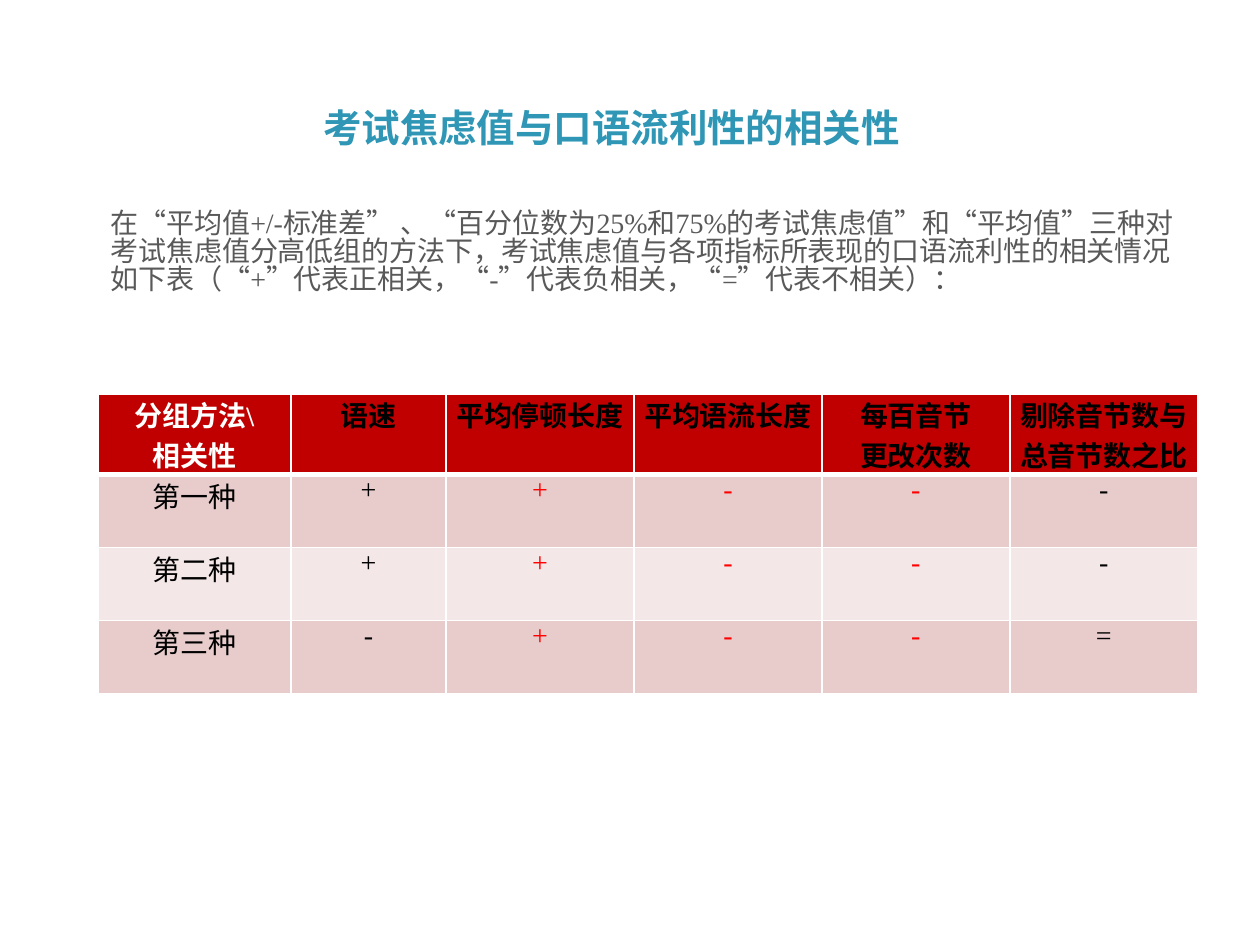
from dataclasses import dataclass

from lxml.etree import SubElement
from pptx import Presentation
from pptx.dml.color import RGBColor
from pptx.enum.text import MSO_ANCHOR, MSO_AUTO_SIZE, PP_ALIGN
from pptx.oxml.ns import qn
from pptx.util import Emu, Pt

PX = 914400 / 126
COLORS = {
    "title": "2F97B5",
    "body": "595959",
    "header": "C00000",
    "band_dark": "E8CCCC",
    "band_light": "F4E7E7",
    "white": "FFFFFF",
    "black": "000000",
    "red": "FF0000",
}
LATIN = "Times New Roman"

TITLE = "考试焦虑值与口语流利性的相关性"
INTRO = (
    "在“平均值+/-标准差” 、“百分位数为25%和75%的考试焦虑值”和“平均值”三种对考试焦虑值"
    "分高低组的方法下，考试焦虑值与各项指标所表现的口语流利性的相关情况如下表"
    "（“+”代表正相关，“-”代表负相关，“=”代表不相关）："
)
ROWS = [
    ["分组方法\\\n相关性", "语速", "平均停顿长度", "平均语流长度",
     "每百音节\n更改次数", "剔除音节数与总音节数之比"],
    ["第一种", "+", "+", "-", "-", "-"],
    ["第二种", "+", "+", "-", "-", "-"],
    ["第三种", "-", "+", "-", "-", "="],
]
COLUMN_WIDTHS = [193, 155] + [188] * 4
ROW_HEIGHT = 73
RED_COLUMNS = {2, 3, 4}


@dataclass(frozen=True)
class Box:
    left: int
    top: int
    width: int
    height: int

    def emu(self) -> list[Emu]:
        return [px(v) for v in (self.left, self.top, self.width, self.height)]


@dataclass(frozen=True)
class TextStyle:
    size: int
    color: str
    font: str = LATIN
    bold: bool = False
    align: PP_ALIGN = PP_ALIGN.CENTER


def px(value: int) -> Emu:
    return Emu(round(value * PX))


def rgb(name: str) -> RGBColor:
    return RGBColor.from_string(COLORS[name])


def write_text(frame, text: str, style: TextStyle) -> None:
    """Fill a text frame, one paragraph for each line of the text."""
    frame.text = text
    for paragraph in frame.paragraphs:
        paragraph.alignment = style.align
        font = paragraph.font
        font.name, font.size, font.bold = style.font, Pt(style.size), style.bold
        font.color.rgb = rgb(style.color)


def fill_placeholder(shape, box: Box, text: str, style: TextStyle, anchor: MSO_ANCHOR) -> None:
    shape.left, shape.top, shape.width, shape.height = box.emu()
    frame = shape.text_frame
    frame.word_wrap = True
    frame.auto_size = MSO_AUTO_SIZE.NONE
    frame.vertical_anchor = anchor
    write_text(frame, text, style)


def remove_bullet(paragraph) -> None:
    properties = paragraph._p.get_or_add_pPr()
    properties.set("marL", "0")
    properties.set("indent", "0")
    bullet = SubElement(properties, qn("a:buNone"))
    properties.find(qn("a:defRPr")).addprevious(bullet)


def add_borders(cell, widths: dict[str, int]) -> None:
    """Draw white borders; widths maps each side (L, R, T, B) to points."""
    properties = cell._tc.get_or_add_tcPr()
    for side, width in widths.items():
        line = SubElement(properties, qn(f"a:ln{side}"), w=str(Pt(width)))
        fill = SubElement(line, qn("a:solidFill"))
        SubElement(fill, qn("a:srgbClr"), val=COLORS["white"])


def cell_style(row: int, column: int) -> TextStyle:
    if row == 0:
        return TextStyle(16, "black" if column else "white", bold=True)
    return TextStyle(16, "red" if column in RED_COLUMNS else "black")


def row_fill(row: int) -> str:
    if row == 0:
        return "header"
    return "band_dark" if row % 2 else "band_light"


def add_correlation_table(slide, left: int, top: int) -> None:
    box = Box(left, top, sum(COLUMN_WIDTHS), ROW_HEIGHT * len(ROWS))
    table = slide.shapes.add_table(len(ROWS), len(COLUMN_WIDTHS), *box.emu()).table
    for column, width in zip(table.columns, COLUMN_WIDTHS):
        column.width = px(width)
    for r, texts in enumerate(ROWS):
        table.rows[r].height = px(ROW_HEIGHT)
        for c, text in enumerate(texts):
            cell = table.cell(r, c)
            cell.margin_left = cell.margin_right = px(9)
            cell.margin_top = cell.margin_bottom = 0
            add_borders(cell, {"L": 1, "R": 1, "T": 3 if r == 1 else 1, "B": 3 if r == 0 else 1})
            cell.fill.solid()
            cell.fill.fore_color.rgb = rgb(row_fill(r))
            write_text(cell.text_frame, text, cell_style(r, c))


def main() -> None:
    presentation = Presentation()
    presentation.slide_width, presentation.slide_height = px(1260), px(945)
    slide = presentation.slides.add_slide(presentation.slide_layouts[1])

    fill_placeholder(slide.shapes.title, Box(39, 0, 1145, 157), TITLE,
                     TextStyle(22, "title", font="Arial", bold=True), MSO_ANCHOR.BOTTOM)

    body = slide.placeholders[1]
    fill_placeholder(body, Box(98, 205, 1099, 624), INTRO,
                     TextStyle(16, "body", align=PP_ALIGN.LEFT), MSO_ANCHOR.TOP)
    paragraph = body.text_frame.paragraphs[0]
    paragraph.line_spacing = 0.83
    paragraph.space_before = Pt(0)
    remove_bullet(paragraph)

    add_correlation_table(slide, 98, 394)
    presentation.save("out.pptx")


if __name__ == "__main__":
    main()
